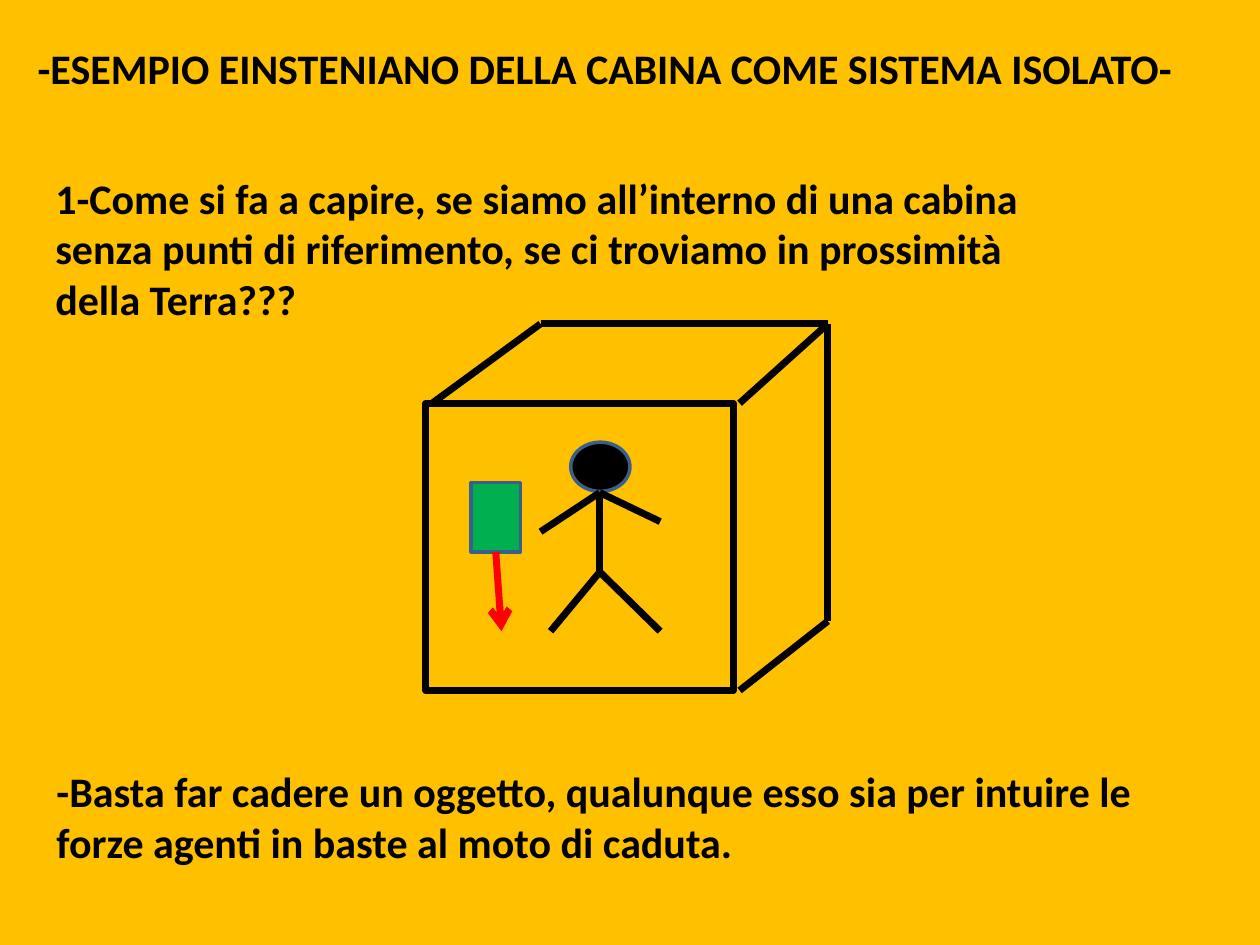
from dataclasses import dataclass
from lxml.etree import SubElement
from pptx import Presentation
from pptx.dml.color import RGBColor
from pptx.enum.shapes import MSO_CONNECTOR, MSO_SHAPE
from pptx.oxml.ns import qn
from pptx.util import Inches, Pt


@dataclass(frozen=True)
class Theme:
    back: str = "FFC000"
    ink: str = "000000"
    edge: str = "3A5F8C"
    box: str = "00B050"
    force: str = "FF0000"
    font: str = "Calibri"
    size: int = 24
    thick: int = 4
    thin: int = 2


THEME = Theme()

# All places are percentages of the slide's width and height.
TEXTS = [
    ("-ESEMPIO EINSTENIANO DELLA CABINA COME SISTEMA ISOLATO-",
     (2, 3.87, 92.1, 6.67)),
    ("1-Come si fa a capire, se siamo all’interno di una cabina senza punti "
     "di riferimento, se ci troviamo in prossimità della Terra???",
     (3.4, 17.6, 81.9, 17.47)),
    ("-Basta far cadere un oggetto, qualunque esso sia per intuire le forze "
     "agenti in baste al moto di caduta.",
     (3.5, 80.4, 90.6, 12.13)),
]

FRONT = (33.8, 42.67, 24.4, 30.4)
HEAD = (45.3, 46.8, 4.7, 5.2)
BOX = (37.4, 51.07, 3.9, 7.33)
FALL = (39.8, 66.8)

# Cabin corners: front left and right, back left and right
TOP_L, TOP_R, LOW_R = (34.3, 42.67), (58.7, 42.67), (58.7, 73.07)
BACK_L, BACK_R, BACK_LOW = (42.9, 34.27), (65.7, 34.27), (65.7, 65.73)
CABIN = [(TOP_L, BACK_L), (TOP_R, BACK_R), (LOW_R, BACK_LOW),
         (BACK_R, BACK_LOW), (BACK_L, BACK_R)]

NECK, HIP = (47.6, 52.13), (47.6, 60.53)
MAN = [(NECK, HIP), (NECK, (42.9, 56.27)), (NECK, (52.4, 55.2)),
       (HIP, (43.7, 66.8)), (HIP, (52.4, 66.8))]

deck = Presentation()
deck.slide_width, deck.slide_height = Inches(10), Inches(7.5)
slide = deck.slides.add_slide(deck.slide_layouts[6])
slide.background.fill.solid()
slide.background.fill.fore_color.rgb = RGBColor.from_string(THEME.back)


def scale(*parts):
    """Turn percentages, x and y in turn, into slide lengths."""
    sides = (deck.slide_width, deck.slide_height)
    return [round(part * sides[i % 2] / 100) for i, part in enumerate(parts)]


def ink(line, color, width):
    line.color.rgb = RGBColor.from_string(color)
    line.width = Pt(width)


def add_text(text, place):
    frame = slide.shapes.add_textbox(*scale(*place)).text_frame
    frame.word_wrap = True
    para = frame.paragraphs[0]
    para.text = text
    font = para.font
    font.name, font.size, font.bold = THEME.font, Pt(THEME.size), True
    font.color.rgb = RGBColor.from_string(THEME.ink)


def add_shape(kind, place, fill, edge, width):
    shape = slide.shapes.add_shape(kind, *scale(*place))
    shape.shadow.inherit = False
    shape.fill.solid()
    shape.fill.fore_color.rgb = RGBColor.from_string(fill)
    ink(shape.line, edge, width)
    return shape


def add_line(start, end, color=THEME.ink):
    line = slide.shapes.add_connector(
        MSO_CONNECTOR.STRAIGHT, *scale(*start, *end))
    ink(line.line, color, THEME.thick)
    SubElement(line._element.spPr, qn("a:effectLst"))
    return line


for text, place in TEXTS[:2]:
    add_text(text, place)

add_shape(MSO_SHAPE.RECTANGLE, FRONT, THEME.back, THEME.ink, THEME.thick)
for start, end in CABIN:
    add_line(start, end)

add_shape(MSO_SHAPE.OVAL, HEAD, THEME.ink, THEME.edge, THEME.thin)
for start, end in MAN:
    add_line(start, end)

box = add_shape(MSO_SHAPE.RECTANGLE, BOX, THEME.box, THEME.edge, THEME.thin)
left, top, width, height = BOX
arrow = add_line((left + width / 2, top + height), FALL, THEME.force)
arrow.begin_connect(box, 2)
SubElement(arrow.line._get_or_add_ln(), qn("a:tailEnd"), type="arrow")

add_text(*TEXTS[2])
deck.save("out.pptx")
